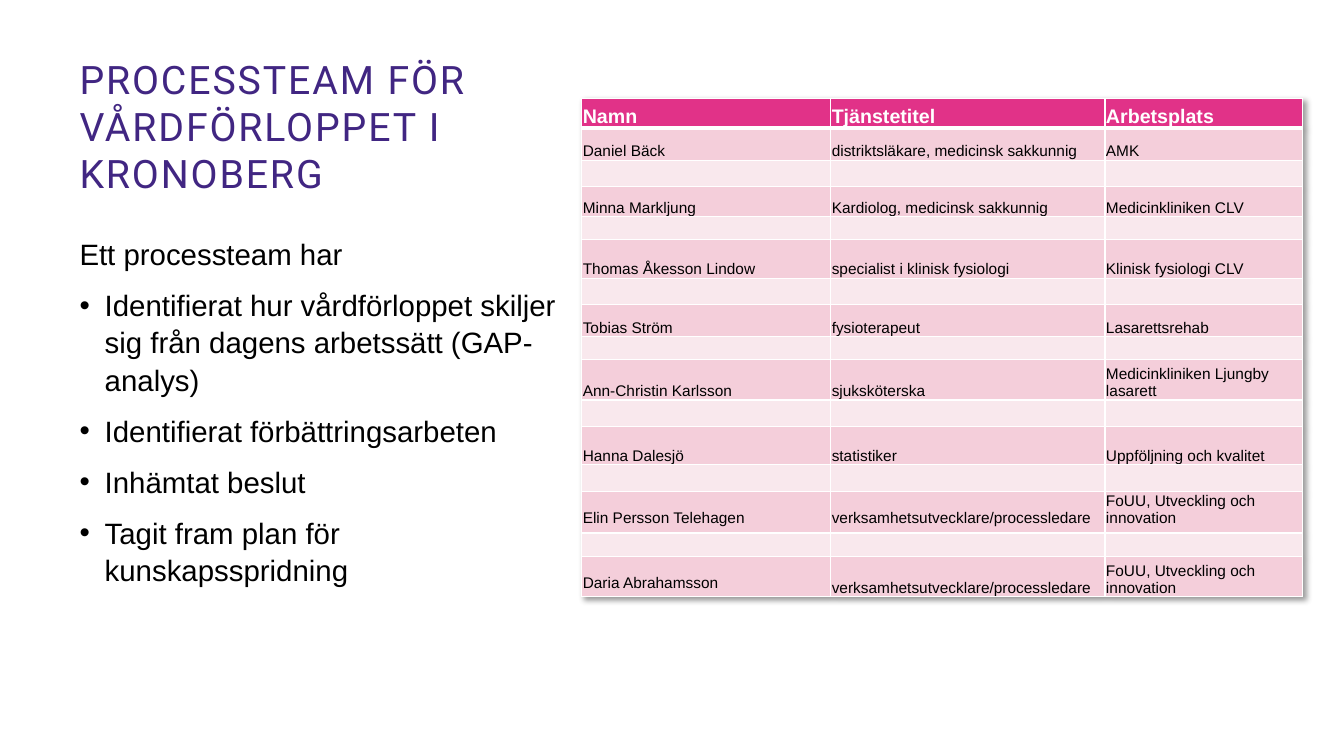
from dataclasses import dataclass

from lxml import etree
from pptx import Presentation
from pptx import util as u
from pptx.dml.color import RGBColor
from pptx.enum import text
from pptx.oxml import ns


@dataclass(frozen=True)
class Theme:
    title_font: str = "Roboto"
    body_font: str = "Arial"
    purple: str = "412682"
    pink: str = "E13288"
    member_fill: str = "F4CEDA"
    gap_fill: str = "F9E8ED"
    white: str = "FFFFFF"
    black: str = "000000"
    title_size: int = 28
    body_size: int = 21
    header_size: int = 14
    cell_size: int = 11


@dataclass(frozen=True)
class Member:
    name: str
    role: str
    workplace: str
    height: float
    gap_after: float = 0.0

    def texts(self) -> tuple[str, str, str]:
        return self.name, self.role, self.workplace


THEME = Theme()
HEADINGS = ("Namn", "Tjänstetitel", "Arbetsplats")
HEADER_HEIGHT = 0.29
COLUMN_WIDTHS = (2.47, 2.72, 1.96)
MEMBERS = (
    Member("Daniel Bäck", "distriktsläkare, medicinsk sakkunnig", "AMK", 0.32, 0.26),
    Member("Minna Markljung", "Kardiolog, medicinsk sakkunnig", "Medicinkliniken CLV", 0.3, 0.23),
    Member("Thomas Åkesson Lindow", "specialist i klinisk fysiologi", "Klinisk fysiologi CLV", 0.38, 0.26),
    Member("Tobias Ström", "fysioterapeut", "Lasarettsrehab", 0.32, 0.23),
    Member("Ann-Christin Karlsson", "sjuksköterska", "Medicinkliniken Ljungby lasarett", 0.4, 0.26),
    Member("Hanna Dalesjö", "statistiker", "Uppföljning och kvalitet", 0.38, 0.27),
    Member("Elin Persson Telehagen", "verksamhetsutvecklare/processledare",
           "FoUU, Utveckling och innovation", 0.41, 0.23),
    Member("Daria Abrahamsson", "verksamhetsutvecklare/processledare",
           "FoUU, Utveckling och innovation", 0.4),
)
# Top-anchored cells: (row, column) and top margin
TOP_MARGINS = {(13, 0): 0.18, (13, 1): 0.18, (13, 2): 0.01, (15, 0): 0.18}
INTRO = "Ett processteam har"
BULLETS = (
    "Identifierat hur vårdförloppet skiljer sig från dagens arbetssätt (GAP-analys)",
    "Identifierat förbättringsarbeten",
    "Inhämtat beslut",
    "Tagit fram plan för kunskapsspridning",
)


def add_element(parent, tag: str, **attributes: str):
    return etree.SubElement(parent, ns.qn(tag), attributes)


def style_runs(para, font: str, size: int, color: str, bold: bool = False) -> None:
    for span in para.runs:
        span.font.name = font
        span.font.size = u.Pt(size)
        span.font.bold = bold
        span.font.color.rgb = RGBColor.from_string(color)


def add_box(page, left: float, top: float, width: float, height: float):
    box = page.shapes.add_textbox(*map(u.Inches, (left, top, width, height)))
    box.text_frame.word_wrap = True
    return box


def add_title(page) -> None:
    box = add_box(page, 0.69, 0.55, 5.29, 1.45)
    box.text_frame.vertical_anchor = text.MSO_ANCHOR.BOTTOM
    para = box.text_frame.paragraphs[0]
    para.text = "PROCESSTEAM FÖR \vVÅRDFÖRLOPPET I KRONOBERG"
    style_runs(para, THEME.title_font, THEME.title_size, THEME.purple)
    for span in para.runs:
        span.font._element.set("spc", "140")


def add_body(page) -> None:
    frame = add_box(page, 0.69, 2.28, 5.08, 4.42).text_frame
    frame.text = "\n".join((INTRO, *BULLETS))
    for index, para in enumerate(frame.paragraphs):
        para.space_before = u.Pt(10)
        para.line_spacing = 1.05
        style_runs(para, THEME.body_font, THEME.body_size, THEME.black)
        if index:
            properties = para._p.get_or_add_pPr()
            properties.set("marL", str(u.Inches(0.25)))
            properties.set("indent", str(-u.Inches(0.25)))
            add_element(properties, "a:buFont", typeface=THEME.body_font)
            add_element(properties, "a:buChar", char="•")


def set_borders(cell, bottom: int) -> None:
    properties = cell._tc.get_or_add_tcPr()
    for side, points in (("L", 1), ("R", 1), ("T", 1), ("B", bottom)):
        line = add_element(properties, f"a:ln{side}", w=str(u.Pt(points)))
        add_element(add_element(line, "a:solidFill"), "a:srgbClr", val=THEME.white)


def fill_cell(cell, content: str, fill: str, size: int, color: str,
              header: bool = False, top_margin: float | None = None) -> None:
    set_borders(cell, 3 if header else 1)
    cell.fill.solid()
    cell.fill.fore_color.rgb = RGBColor.from_string(fill)
    cell.margin_left = cell.margin_right = u.Inches(0.01)
    cell.margin_top = u.Inches(0.01 if top_margin is None else top_margin)
    cell.margin_bottom = 0
    cell.vertical_anchor = text.MSO_ANCHOR.BOTTOM if top_margin is None else text.MSO_ANCHOR.TOP
    para = cell.text_frame.paragraphs[0]
    if content:
        para.text = content
        style_runs(para, THEME.body_font, size, color, header)
    else:
        # Keep empty rows from growing
        add_element(para._p, "a:endParaRPr", sz=str(size * 100))


def add_table_shadow(table) -> None:
    properties = table._tbl.tblPr
    effects = add_element(properties, "a:effectLst")
    properties.insert(0, effects)
    shadow = add_element(effects, "a:outerShdw", blurRad=str(u.Pt(4)), dist=str(u.Pt(3)),
                         dir="2700000", algn="tl", rotWithShape="0")
    color = add_element(shadow, "a:srgbClr", val=THEME.black)
    add_element(color, "a:alpha", val="40000")


def add_team_table(page) -> None:
    # Each member row is followed by a paler empty row, except the last
    rows = [(HEADINGS, HEADER_HEIGHT, THEME.pink)]
    for member in MEMBERS:
        rows.append((member.texts(), member.height, THEME.member_fill))
        if member.gap_after:
            rows.append((("", "", ""), member.gap_after, THEME.gap_fill))

    frame = page.shapes.add_table(len(rows), len(COLUMN_WIDTHS), u.Inches(5.77), u.Inches(0.98),
                                  u.Inches(7.15), u.Inches(4.93))
    table = frame.table
    add_table_shadow(table)
    for column, width in zip(table.columns, COLUMN_WIDTHS):
        column.width = u.Inches(width)
    for r, (contents, height, fill) in enumerate(rows):
        table.rows[r].height = u.Inches(height)
        header = r == 0
        size = THEME.header_size if header else THEME.cell_size
        color = THEME.white if header else THEME.black
        for c, content in enumerate(contents):
            fill_cell(table.cell(r, c), content, fill, size, color, header, TOP_MARGINS.get((r, c)))


def main() -> None:
    deck = Presentation()
    deck.slide_width, deck.slide_height = u.Inches(13.33), u.Inches(7.5)
    page = deck.slides.add_slide(deck.slide_layouts[6])
    add_title(page)
    add_team_table(page)
    add_body(page)
    deck.save("out.pptx")


if __name__ == "__main__":
    main()
